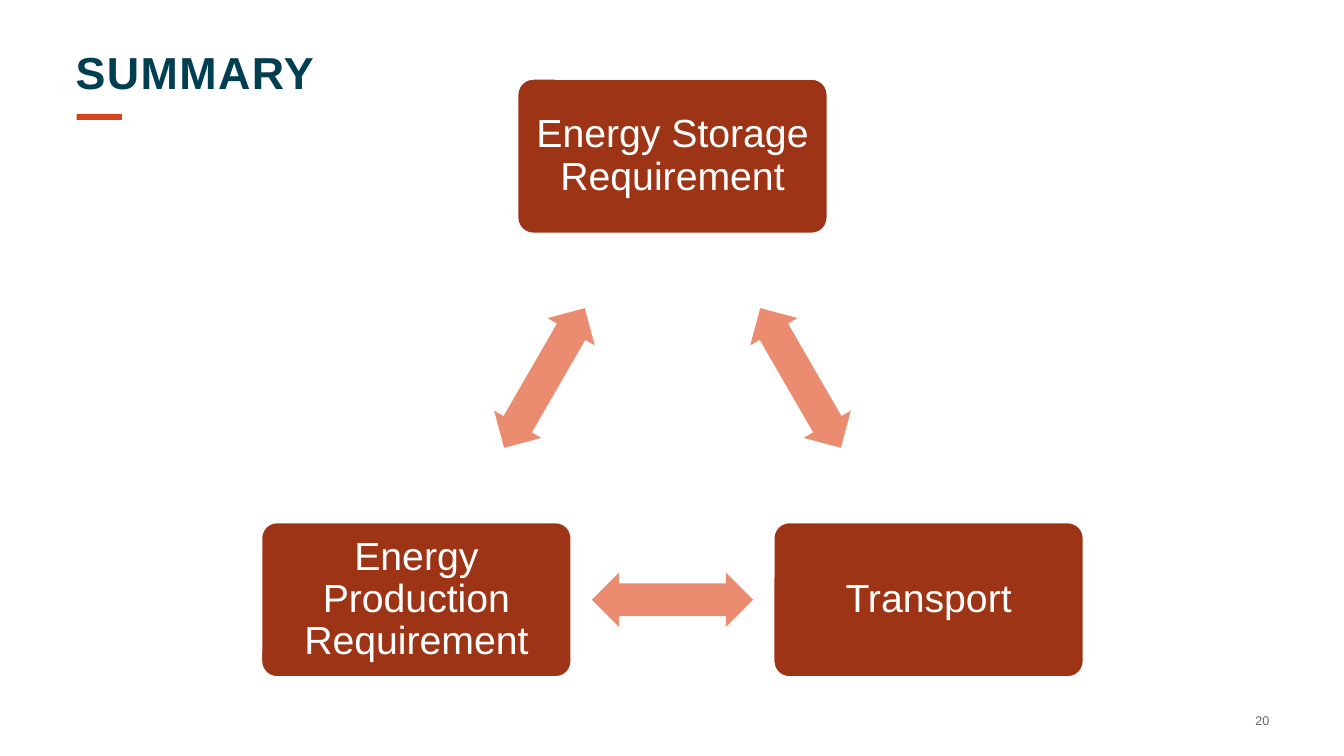
from dataclasses import dataclass

from pptx import Presentation
from pptx.dml.color import RGBColor
from pptx.enum.shapes import MSO_SHAPE as Shape
from pptx.enum.text import MSO_ANCHOR as Anchor, PP_ALIGN as Align
from pptx.util import Inches, Pt


@dataclass(frozen=True)
class Theme:
    font: str = "Arial"
    title: str = "003E51"
    accent: str = "D3451D"
    box: str = "9E3416"
    arrow: str = "EB8C71"
    white: str = "FFFFFF"
    number: str = "636669"
    title_size: int = 32
    box_size: int = 28
    number_size: int = 9


@dataclass(frozen=True)
class Node:
    text: str
    x: float  # centre
    y: float


THEME = Theme()
BOX_W, BOX_H = 3.07, 1.53
ARROW_W, ARROW_H = 1.6, 0.54
MID_X, SPREAD, TOP_Y, BASE_Y = 6.67, 2.54, 1.55, 5.95

NODES = [
    Node("Energy Storage Requirement", MID_X, TOP_Y),
    Node("Transport", MID_X + SPREAD, BASE_Y),
    Node("Energy Production Requirement", MID_X - SPREAD, BASE_Y),
]


def set_text(sp, text: str, size: int, color: str, align=Align.LEFT,
             anchor=Anchor.TOP, inset: float = 0, spacing: float = 1.0):
    """Fill a shape with one paragraph and return its run."""
    tf = sp.text_frame
    tf.word_wrap = True
    tf.vertical_anchor = anchor
    tf.margin_left = tf.margin_right = Inches(inset)
    tf.margin_top = tf.margin_bottom = Inches(inset)
    tf.text = text
    p = tf.paragraphs[0]
    p.alignment = align
    p.line_spacing = spacing
    r = p.runs[0]
    r.font.name = THEME.font
    r.font.size = Pt(size)
    r.font.color.rgb = RGBColor.from_string(color)
    return r


def add_filled(slide, kind, x: float, y: float, w: float, h: float, color: str):
    """Add a flat shape without outline, placed by its centre."""
    sp = slide.shapes.add_shape(kind, Inches(x - w / 2), Inches(y - h / 2),
                                Inches(w), Inches(h))
    sp.shadow.inherit = False
    sp.fill.solid()
    sp.fill.fore_color.rgb = RGBColor.from_string(color)
    sp.line.fill.background()
    return sp


def add_box(slide, node: Node) -> None:
    sp = add_filled(slide, Shape.ROUNDED_RECTANGLE, node.x, node.y,
                    BOX_W, BOX_H, THEME.box)
    sp.adjustments[0] = 0.1
    sp.line.color.rgb = RGBColor.from_string(THEME.white)
    sp.line.width = Pt(1)
    set_text(sp, node.text, THEME.box_size, THEME.white,
             Align.CENTER, Anchor.MIDDLE, inset=0.12, spacing=0.9)


def add_arrow(slide, a: Node, b: Node, angle: int) -> None:
    """Add a double arrow halfway between two boxes."""
    sp = add_filled(slide, Shape.LEFT_RIGHT_ARROW, (a.x + b.x) / 2,
                    (a.y + b.y) / 2, ARROW_W, ARROW_H, THEME.arrow)
    sp.adjustments[0], sp.adjustments[1] = 0.6, 0.5
    sp.rotation = angle


def main() -> None:
    prs = Presentation()
    prs.slide_width, prs.slide_height = Inches(13.33), Inches(7.5)
    slide = prs.slides.add_slide(prs.slide_layouts[6])

    # Title with accent bar
    title = slide.shapes.add_textbox(Inches(0.75), Inches(0.5),
                                     Inches(11.83), Inches(0.63))
    r = set_text(title, "SUMMARY", THEME.title_size, THEME.title, spacing=0.9)
    r.font.bold = True
    r.font._element.set("spc", "100")
    add_filled(slide, Shape.RECTANGLE, 0.985, 1.16, 0.45, 0.06, THEME.accent)

    # Slide number
    number = slide.shapes.add_textbox(Inches(12.21), Inches(6.95),
                                      Inches(0.38), Inches(0.4))
    set_text(number, "20", THEME.number_size, THEME.number,
             Align.RIGHT, Anchor.MIDDLE)

    # Cycle: each box, then the arrow to the next one
    for i, node in enumerate(NODES):
        add_box(slide, node)
        add_arrow(slide, node, NODES[(i + 1) % len(NODES)], 60 + 120 * i)

    prs.save("out.pptx")


if __name__ == "__main__":
    main()
